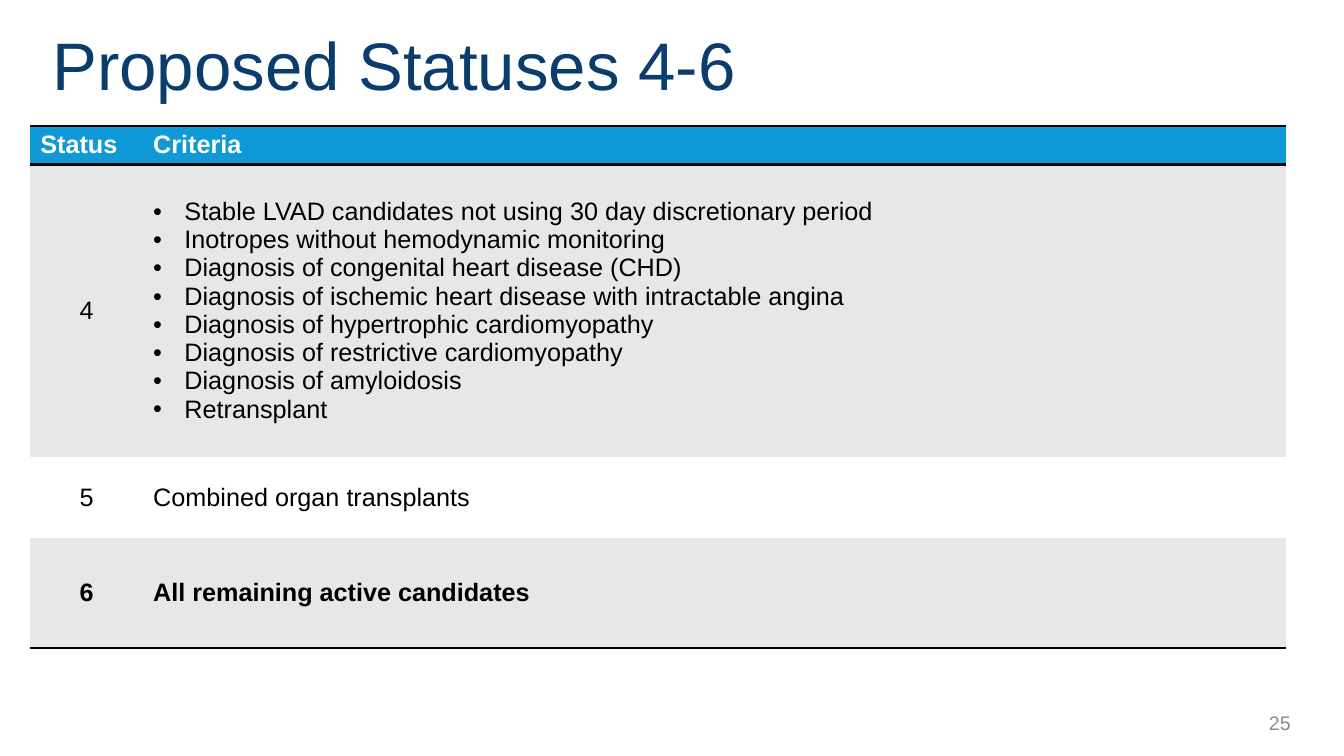
"""Build the slide listing the criteria for proposed statuses 4 to 6."""
from lxml import etree
from pptx import Presentation
from pptx.dml.color import RGBColor
from pptx.enum.text import MSO_ANCHOR, PP_ALIGN
from pptx.oxml.ns import qn
from pptx.util import Inches, Pt

MIDDLE, TOP = MSO_ANCHOR.MIDDLE, MSO_ANCHOR.TOP
LEFT, CENTER, RIGHT = PP_ALIGN.LEFT, PP_ALIGN.CENTER, PP_ALIGN.RIGHT
PLAIN_TABLE = "{2D5ABB26-0587-4C30-8999-92F81FD0307C}"
BLACK, WHITE, GREY, BLUE = "000000", "FFFFFF", "E7E7E7", "0F99D6"


def format_text(tf, size, color, align=LEFT, bold=False):
    for p in tf.paragraphs:
        p.alignment = align
        for r in p.runs:
            r.font.name = "Arial"
            r.font.size = Pt(size)
            r.font.bold = bold
            r.font.color.rgb = RGBColor.from_string(color)


def add_border(cell, side):
    ln = etree.SubElement(cell._tc.get_or_add_tcPr(), qn(f"a:{side}"), w=str(Pt(2)))
    fill = etree.SubElement(ln, qn("a:solidFill"))
    etree.SubElement(fill, qn("a:srgbClr"), val=BLACK)


status_4 = [
    "Stable LVAD candidates not using 30 day discretionary period",
    "Inotropes without hemodynamic monitoring",
    "Diagnosis of congenital heart disease (CHD)",
    "Diagnosis of ischemic heart disease with intractable angina",
    "Diagnosis of hypertrophic cardiomyopathy",
    "Diagnosis of restrictive cardiomyopathy",
    "Diagnosis of amyloidosis",
    "Retransplant",
]
rows = [
    ("Status", "Criteria", 0.38, BLUE, WHITE, True, ["lnT", "lnB"]),
    ("4", "\n".join(status_4), 2.9, GREY, BLACK, False, []),
    ("5", "Combined organ transplants", 0.81, WHITE, BLACK, False, []),
    ("6", "All remaining active candidates", 1.09, GREY, BLACK, True, ["lnB"]),
]

prs = Presentation()
prs.slide_width, prs.slide_height = Inches(13.33), Inches(7.5)
s = prs.slides.add_slide(prs.slide_layouts[5])

title = s.shapes.title
title.left, title.top = Inches(0.42), Inches(0.17)
title.width, title.height = Inches(12.74), Inches(0.93)
title.text_frame.text = "Proposed Statuses 4-6"
title.text_frame.vertical_anchor = MIDDLE
format_text(title.text_frame, 48, "0A3C6E")

frame = s.shapes.add_table(len(rows), 2, Inches(0.3), Inches(1.25), Inches(12.46), Inches(5.18))
table = frame.table
table._tbl.tblPr.find(qn("a:tableStyleId")).text = PLAIN_TABLE
table.horz_banding = False
table.columns[0].width = Inches(1.12)
table.columns[1].width = Inches(11.34)

for i, (status, criteria, height, fill, color, bold, borders) in enumerate(rows):
    table.rows[i].height = Inches(height)
    for j, text in enumerate((status, criteria)):
        cell = table.cell(i, j)
        for side in borders:
            add_border(cell, side)
        cell.fill.solid()
        cell.fill.fore_color.rgb = RGBColor.from_string(fill)
        cell.vertical_anchor = MIDDLE if i else TOP
        cell.text_frame.text = text
        format_text(cell.text_frame, 18, color, CENTER if i and j == 0 else LEFT, bold)

for p in table.cell(1, 1).text_frame.paragraphs:
    pPr = p._p.get_or_add_pPr()
    pPr.set("marL", str(Inches(0.31)))
    pPr.set("indent", str(-Inches(0.31)))
    etree.SubElement(pPr, qn("a:buFont"), typeface="Arial")
    etree.SubElement(pPr, qn("a:buChar"), char="•")

number = s.shapes.add_textbox(Inches(10.64), Inches(6.97), Inches(2.26), Inches(0.4))
number.text_frame.word_wrap = True
number.text_frame.vertical_anchor = MIDDLE
number.text_frame.text = "25"
format_text(number.text_frame, 14, "8C8C8C", RIGHT)

prs.save("out.pptx")
